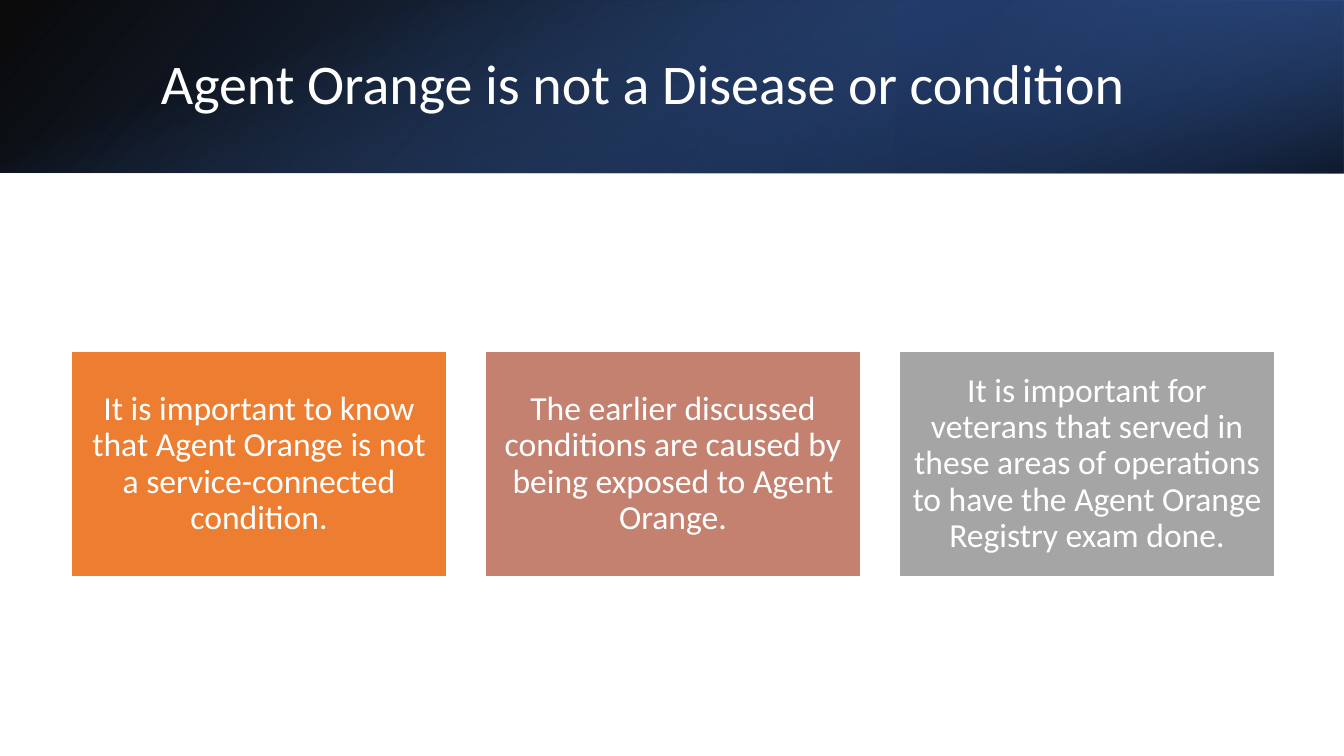
from lxml import etree
from pptx import Presentation
from pptx.dml.color import RGBColor
from pptx.enum.shapes import MSO_SHAPE
from pptx.enum.text import MSO_ANCHOR, PP_ALIGN
from pptx.oxml.ns import qn
from pptx.util import Emu, Pt

RECTANGLE = MSO_SHAPE.RECTANGLE
MIDDLE = MSO_ANCHOR.MIDDLE
LEFT, CENTER = PP_ALIGN.LEFT, PP_ALIGN.CENTER

TITLE = "Agent Orange is not a Disease or condition"
CARDS = [
    ("It is important to know that Agent Orange is not a service-connected condition.", "orange"),
    ("The earlier discussed conditions are caused by being exposed to Agent Orange.", "rose"),
    ("It is important for veterans that served in these areas of operations "
     "to have the Agent Orange Registry exam done.", "gray"),
]

THEME = {
    "font": "Calibri",
    "title_size": 40,
    "card_size": 24,
    "line_spacing": 0.9,
    "white": "FFFFFF",
    "black": "000000",
    "orange": "ED7D31",
    "rose": "C48170",
    "gray": "A5A5A5",
    "blue": "4472C4",
    "deep_blue": "2F5597",
    "navy": "203864",
}

SLIDE_WIDTH, SLIDE_HEIGHT = 1344, 756
BANNER_HEIGHT = 173
GLOW_WIDTH = SLIDE_WIDTH // 3
TURNED_OFFSET = (SLIDE_WIDTH - BANNER_HEIGHT) // 2
TITLE_BOX = (151, 38, 1107, 97)
CARD_LEFT, CARD_TOP, CARD_WIDTH, CARD_HEIGHT, CARD_GAP = 71, 351, 376, 226, 38
CARD_INSET = 10

BANNER_LAYERS = [
    {"box": (0, 0, SLIDE_WIDTH, BANNER_HEIGHT), "rotation": 0, "flip": True,
     "angle": 140, "stops": [(0, "black", 96), (100, "deep_blue", 100)]},
    {"box": (SLIDE_WIDTH - GLOW_WIDTH, 0, GLOW_WIDTH, BANNER_HEIGHT), "rotation": 180, "flip": True,
     "angle": 320, "stops": [(19, "navy", 68), (100, "blue", 79)]},
    {"box": (TURNED_OFFSET, -TURNED_OFFSET, BANNER_HEIGHT, SLIDE_WIDTH), "rotation": 90, "flip": False,
     "angle": 340, "stops": [(23, "blue", 0), (99, "black", 74)]},
]


def px(length):
    return Emu(round(length * 914400 / 100.8))


def color(name):
    return RGBColor.from_string(THEME[name])


def set_all(target, values):
    for name, value in values.items():
        setattr(target, name, value)


def add_rectangle(slide, box):
    shape = slide.shapes.add_shape(RECTANGLE, *map(px, box))
    shape.shadow.inherit = False
    return shape


def apply_gradient(shape, stops, angle):
    gradient = etree.Element(qn("a:gradFill"))
    stop_list = etree.SubElement(gradient, qn("a:gsLst"))
    for position, name, opacity in stops:
        stop = etree.SubElement(stop_list, qn("a:gs"), pos=str(position * 1000))
        stop_color = etree.SubElement(stop, qn("a:srgbClr"), val=THEME[name])
        etree.SubElement(stop_color, qn("a:alpha"), val=str(opacity * 1000))
    etree.SubElement(gradient, qn("a:lin"), ang=str(angle * 60000), scaled="0")
    shape._element.spPr.find(qn("a:prstGeom")).addnext(gradient)


def add_banner_layer(slide, layer):
    shape = add_rectangle(slide, layer["box"])
    shape.rotation = layer["rotation"]
    shape.line.fill.background()
    if layer["flip"]:
        shape._element.spPr.find(qn("a:xfrm")).set("flipH", "1")
    apply_gradient(shape, layer["stops"], layer["angle"])


def write_text(shape, text, size, alignment, frame_format):
    frame = shape.text_frame
    set_all(frame, {"word_wrap": True, "vertical_anchor": MIDDLE, **frame_format})
    paragraph = frame.paragraphs[0]
    set_all(paragraph, {"alignment": alignment, "line_spacing": THEME["line_spacing"]})
    run = paragraph.add_run()
    run.text = text
    set_all(run.font, {"name": THEME["font"], "size": Pt(size)})
    run.font.color.rgb = color("white")


def add_card(slide, index, text, fill):
    left = CARD_LEFT + index * (CARD_WIDTH + CARD_GAP)
    card = add_rectangle(slide, (left, CARD_TOP, CARD_WIDTH, CARD_HEIGHT))
    card.fill.solid()
    card.fill.fore_color.rgb = color(fill)
    card.line.color.rgb = color("white")
    card.line.width = Pt(1)
    insets = {f"margin_{side}": px(CARD_INSET) for side in ("left", "top", "right", "bottom")}
    write_text(card, text, THEME["card_size"], CENTER, insets)


def main():
    presentation = Presentation()
    set_all(presentation, {"slide_width": px(SLIDE_WIDTH), "slide_height": px(SLIDE_HEIGHT)})
    slide = presentation.slides.add_slide(presentation.slide_layouts[6])
    for layer in BANNER_LAYERS:
        add_banner_layer(slide, layer)
    title = slide.shapes.add_textbox(*map(px, TITLE_BOX))
    write_text(title, TITLE, THEME["title_size"], LEFT, {})
    for index, (text, fill) in enumerate(CARDS):
        add_card(slide, index, text, fill)
    presentation.save("out.pptx")


if __name__ == "__main__":
    main()
